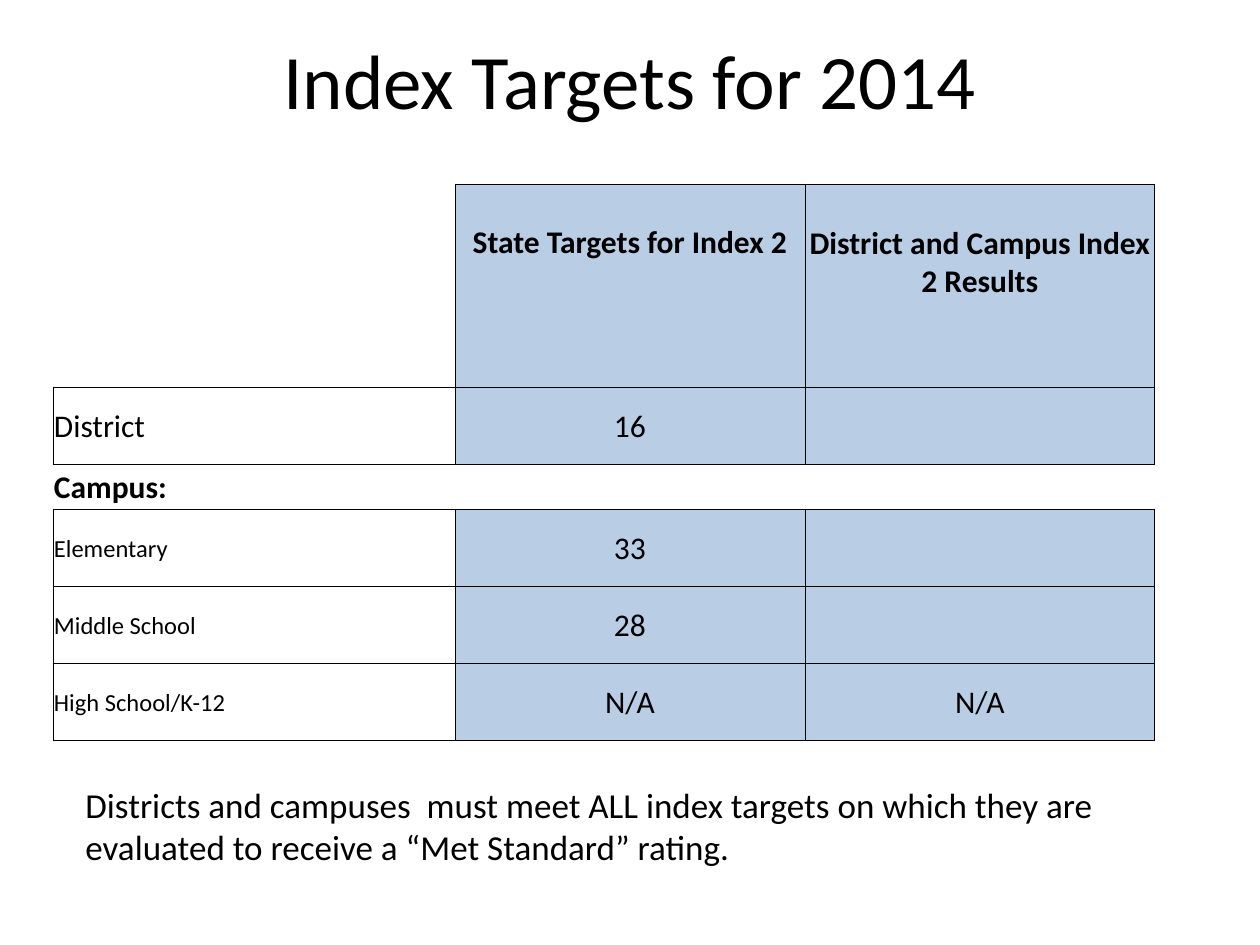
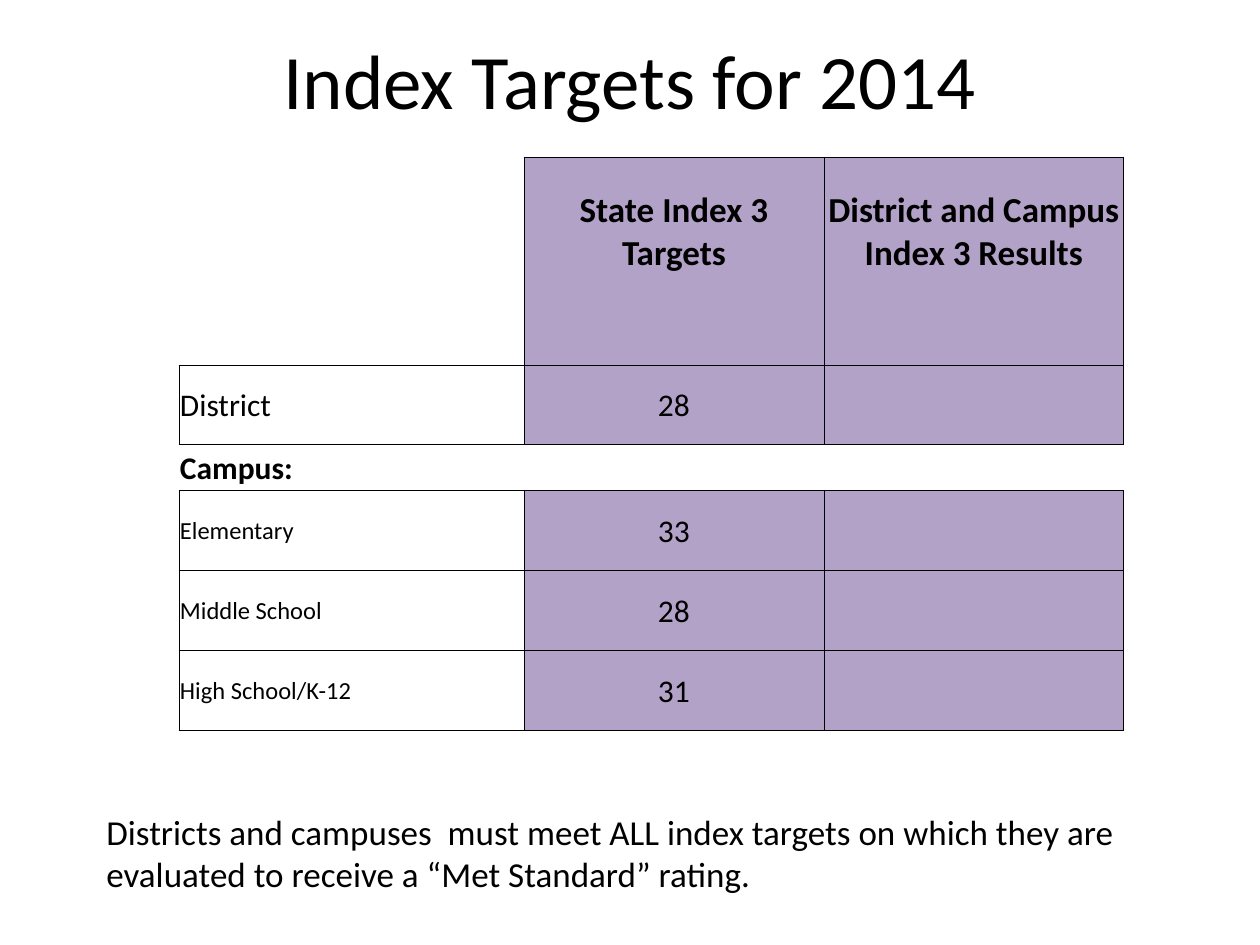
from lxml.etree import SubElement
from pptx import Presentation
from pptx.dml.color import RGBColor
from pptx.enum.text import MSO_ANCHOR, MSO_AUTO_SIZE, PP_ALIGN
from pptx.oxml.ns import qn
from pptx.util import Pt

SCALE = 914400 / 126
FONT = "Calibri"
INK = "000000"
TITLE = "Index Targets for 2014"
NOTE = ("Districts and campuses  must meet ALL index targets on which they are "
        "evaluated to receive a “Met Standard” rating.")
LABELS = ["", "", "", "", "District", "Campus:",
          "Elementary", "Middle School", "High School/K-12", ""]
EDGES = [("", ""), ("", "B"), ("R", "LTR"), ("RB", "LRB"), ("LRTB", "LRTB"),
         ("TB", "TB")] + [("LRTB", "LRTB")] * 3 + [("T", "T")]
TINTED = {2, 3, 4, 6, 7, 8}

PAGES = [
    {"fill": "B9CDE5", "at": (53, 53), "cols": [402, 350, 350],
     "rows": [78, 53, 117, 87, 77, 45, 77, 77, 77, 45],
     "head": ["State Targets for Index 2", "District and Campus Index 2 Results"],
     "size": 18, "anchor": MSO_ANCHOR.MIDDLE,
     "goals": {4: "16", 6: "33", 7: "28", 8: "N/A"},
     "marks": {8: "N/A"}, "note": (73, 777)},
    {"fill": "B3A2C7", "at": (179, 21), "cols": [345, 300, 300],
     "rows": [81, 55, 118, 91, 79, 46, 80, 80, 80, 45],
     "head": ["State Index 3 Targets", "District and Campus Index 3 Results"],
     "size": 20, "anchor": MSO_ANCHOR.BOTTOM,
     "goals": {4: "28", 6: "33", 7: "28", 8: "31"},
     "marks": {}, "note": (94, 804)},
]


def px(*nums):
    return [round(num * SCALE) for num in nums]


def write(frame, text, size, align=PP_ALIGN.LEFT, bold=False):
    frame.text = text
    para = frame.paragraphs[0]
    para.alignment = align
    for run in para.runs:
        font = run.font
        font.name, font.size, font.bold = FONT, Pt(size), bold
        font.color.rgb = RGBColor.from_string(INK)


deck = Presentation()
deck.slide_width, deck.slide_height = px(1260, 945)

for page in PAGES:
    slide = deck.slides.add_slide(deck.slide_layouts[5])
    title = slide.shapes.title
    title.left, title.top, title.width, title.height = px(63, 0, 1134, 158)
    title.text_frame.vertical_anchor = MSO_ANCHOR.MIDDLE
    write(title.text_frame, TITLE, 44, PP_ALIGN.CENTER)

    cols, rows = page["cols"], page["rows"]
    place = px(*page["at"], sum(cols), sum(rows))
    table = slide.shapes.add_table(len(rows), len(cols), *place).table
    table.first_row = table.horz_banding = False
    for col, width in zip(table.columns, px(*cols)):
        col.width = width
    for row, height in zip(table.rows, px(*rows)):
        row.height = height

    texts = [[label, page["goals"].get(r, ""), page["marks"].get(r, "")]
             for r, label in enumerate(LABELS)]
    texts[2][1:] = page["head"]

    for r, line in enumerate(texts):
        for c, text in enumerate(line):
            cell = table.cell(r, c)
            cell.margin_left, cell.margin_right, cell.margin_top, cell.margin_bottom = px(1, 1, 1, 0)
            cell.vertical_anchor = MSO_ANCHOR.MIDDLE
            if r == 2:
                cell.vertical_anchor = page["anchor"] if c == 1 else MSO_ANCHOR.BOTTOM
            size = page["size"] if r == 2 else 14 if c == 0 and r > 5 else 18
            align = PP_ALIGN.CENTER if c else PP_ALIGN.LEFT
            write(cell.text_frame, text, size, align, r in (2, 5))

            props = cell._tc.get_or_add_tcPr()
            for side in "LRTB":
                edge = SubElement(props, qn(f"a:ln{side}"), w=str(Pt(0.5)))
                if side in EDGES[r][c > 0]:
                    SubElement(SubElement(edge, qn("a:solidFill")), qn("a:srgbClr"), val=INK)
                else:
                    SubElement(edge, qn("a:noFill"))
            if c and r in TINTED:
                cell.fill.solid()
                cell.fill.fore_color.rgb = RGBColor.from_string(page["fill"])
            else:
                cell.fill.background()

    table.cell(0, 0).merge(table.cell(0, 2))
    table.cell(9, 1).merge(table.cell(9, 2))

    note = slide.shapes.add_textbox(*px(*page["note"], 1081, 97)).text_frame
    note.word_wrap = True
    note.auto_size = MSO_AUTO_SIZE.SHAPE_TO_FIT_TEXT
    write(note, NOTE, 20)

deck.save("out.pptx")
